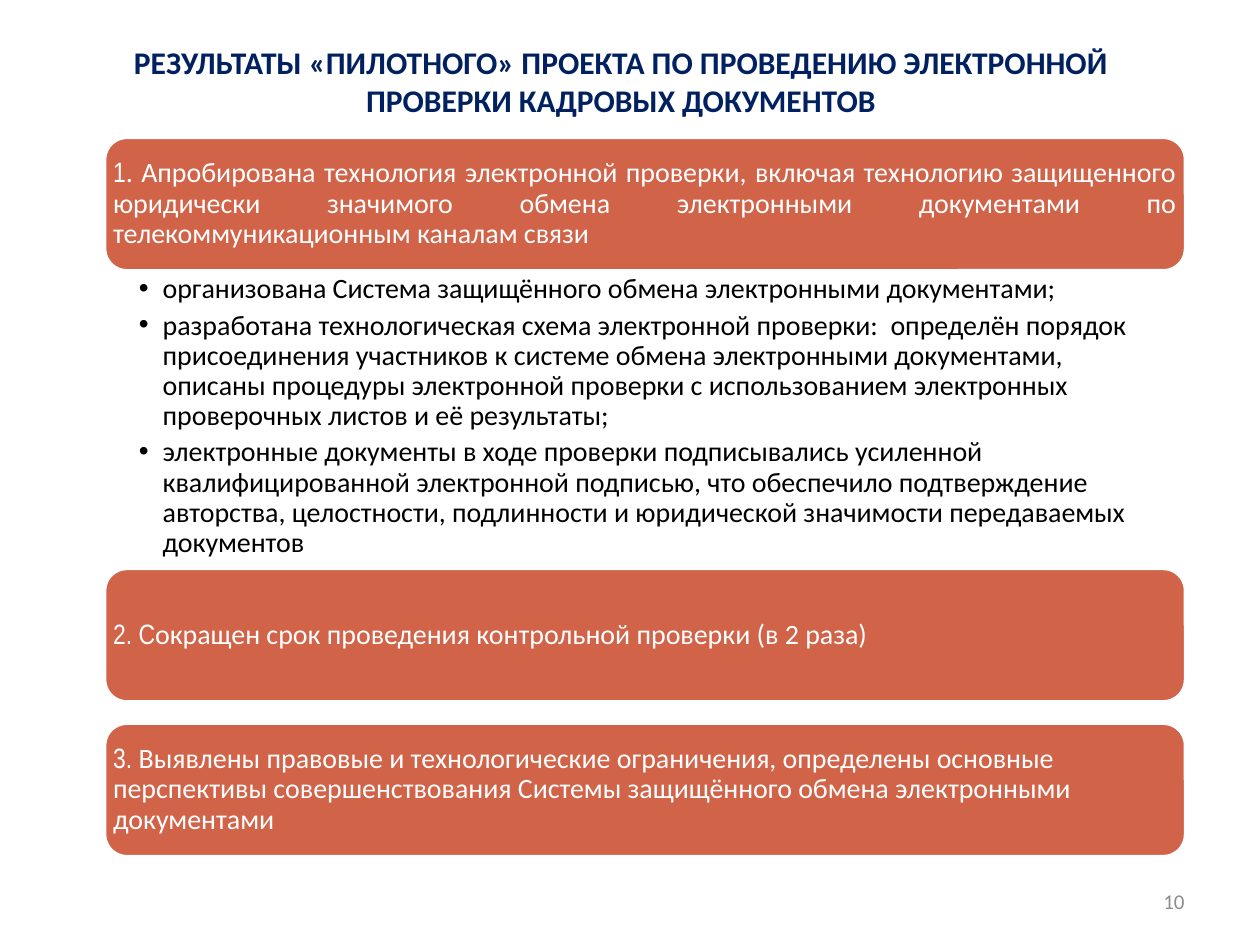
from lxml.etree import SubElement
from pptx import Presentation
from pptx.dml.color import RGBColor
from pptx.enum.shapes import MSO_SHAPE
from pptx.enum.text import MSO_ANCHOR, PP_ALIGN
from pptx.oxml.ns import qn
from pptx.util import Cm, Pt

TITLE = "РЕЗУЛЬТАТЫ «ПИЛОТНОГО» ПРОЕКТА ПО ПРОВЕДЕНИЮ ЭЛЕКТРОННОЙ ПРОВЕРКИ КАДРОВЫХ ДОКУМЕНТОВ"
BANDS = [
    (2.77, "1", ". Апробирована технология электронной проверки, включая технологию "
     "защищенного юридически значимого обмена электронными документами по "
     "телекоммуникационным каналам связи", PP_ALIGN.JUSTIFY),
    (11.46, "2. С", "окращен срок проведения контрольной проверки (в 2 раза)", PP_ALIGN.LEFT),
    (14.58, "3. ", "Выявлены правовые и технологические ограничения, определены основные "
     "перспективы совершенствования Системы защищённого обмена электронными "
     "документами", PP_ALIGN.LEFT),
]
POINTS = [
    "организована Система защищённого обмена электронными документами;",
    "разработана технологическая схема электронной проверки:  определён порядок "
    "присоединения участников к системе обмена электронными документами, описаны "
    "процедуры электронной проверки с использованием электронных проверочных листов "
    "и её результаты;",
    "электронные документы в ходе проверки подписывались усиленной квалифицированной "
    "электронной подписью, что обеспечило подтверждение авторства, целостности, "
    "подлинности и юридической значимости передаваемых документов",
]


def paint(color, code):
    """Set a fill, line or font colour from a hex string."""
    color.rgb = RGBColor.from_string(code)


def write(para, text, size, code, font="Calibri", bold=False):
    """Add one formatted run to a paragraph."""
    run = para.add_run()
    run.text = text
    run.font.size, run.font.name, run.font.bold = Pt(size), font, bold
    paint(run.font.color, code)


def setup(shape, anchor, left=0.25, top=0.13, right=0.25, low=0.13):
    """Wrap the text of a shape and set its anchor and insets."""
    frame = shape.text_frame
    frame.word_wrap, frame.vertical_anchor = True, anchor
    frame.margin_left, frame.margin_top = Cm(left), Cm(top)
    frame.margin_right, frame.margin_bottom = Cm(right), Cm(low)
    return frame


def head(slide, x, y, w, h):
    """Place and format the slide title."""
    title = slide.shapes.title
    title.left, title.top, title.width, title.height = Cm(x), Cm(y), Cm(w), Cm(h)
    para = setup(title, MSO_ANCHOR.TOP).paragraphs[0]
    para.alignment = PP_ALIGN.CENTER
    write(para, TITLE, 18, "002060", bold=True)


def band(slide, x, y, w, h, lead, rest, align):
    """Draw a rounded band with a numbered result."""
    shape = slide.shapes.add_shape(MSO_SHAPE.ROUNDED_RECTANGLE, Cm(x), Cm(y), Cm(w), Cm(h))
    shape.shadow.inherit = False
    shape.fill.solid()
    paint(shape.fill.fore_color, "D16349")
    paint(shape.line.color, "FFFFFF")
    shape.line.width = Pt(2)
    para = setup(shape, MSO_ANCHOR.MIDDLE, 0.04, 0.04, 0.04, 0.04).paragraphs[0]
    para.alignment, para.line_spacing = align, 0.9
    write(para, lead, 16, "FFFFFF", "Arial Narrow")
    write(para, rest, 16, "FFFFFF")


def points(slide, x, y, w, h):
    """Place the bulleted list under the first band."""
    box = slide.shapes.add_textbox(Cm(x), Cm(y), Cm(w), Cm(h))
    frame = setup(box, MSO_ANCHOR.TOP, 0.69, 0.05, 0.3, 0.05)
    for i, text in enumerate(POINTS):
        para = frame.add_paragraph() if i else frame.paragraphs[0]
        para.line_spacing, para.space_after = 0.9, Pt(3.4)
        props = para._p.get_or_add_pPr()
        props.set("marL", str(Cm(0.48)))
        props.set("indent", str(-Cm(0.48)))
        SubElement(props, qn("a:buFont")).set("typeface", "Arial")
        SubElement(props, qn("a:buChar")).set("char", "•")
        write(para, text, 16, "000000")


def number(slide, x, y, w, h):
    """Place the slide number."""
    box = slide.shapes.add_textbox(Cm(x), Cm(y), Cm(w), Cm(h))
    para = setup(box, MSO_ANCHOR.MIDDLE).paragraphs[0]
    para.alignment = PP_ALIGN.RIGHT
    write(para, "10", 12, "8C8C8C")


def main():
    """Build the slide and save it."""
    deck = Presentation()
    deck.slide_width, deck.slide_height = Cm(25.4), Cm(19.05)
    slide = deck.slides.add_slide(deck.slide_layouts[5])
    left, width = 2.11, 21.79
    head(slide, 1.09, 0.74, 22.86, 1.6)
    for top, lead, rest, align in BANDS:
        band(slide, left, top, width, 2.69, lead, rest, align)
    points(slide, left, 5.49, width, 5.97)
    number(slide, 18.21, 17.65, 5.92, 1.02)
    deck.save("out.pptx")


if __name__ == "__main__":
    main()
